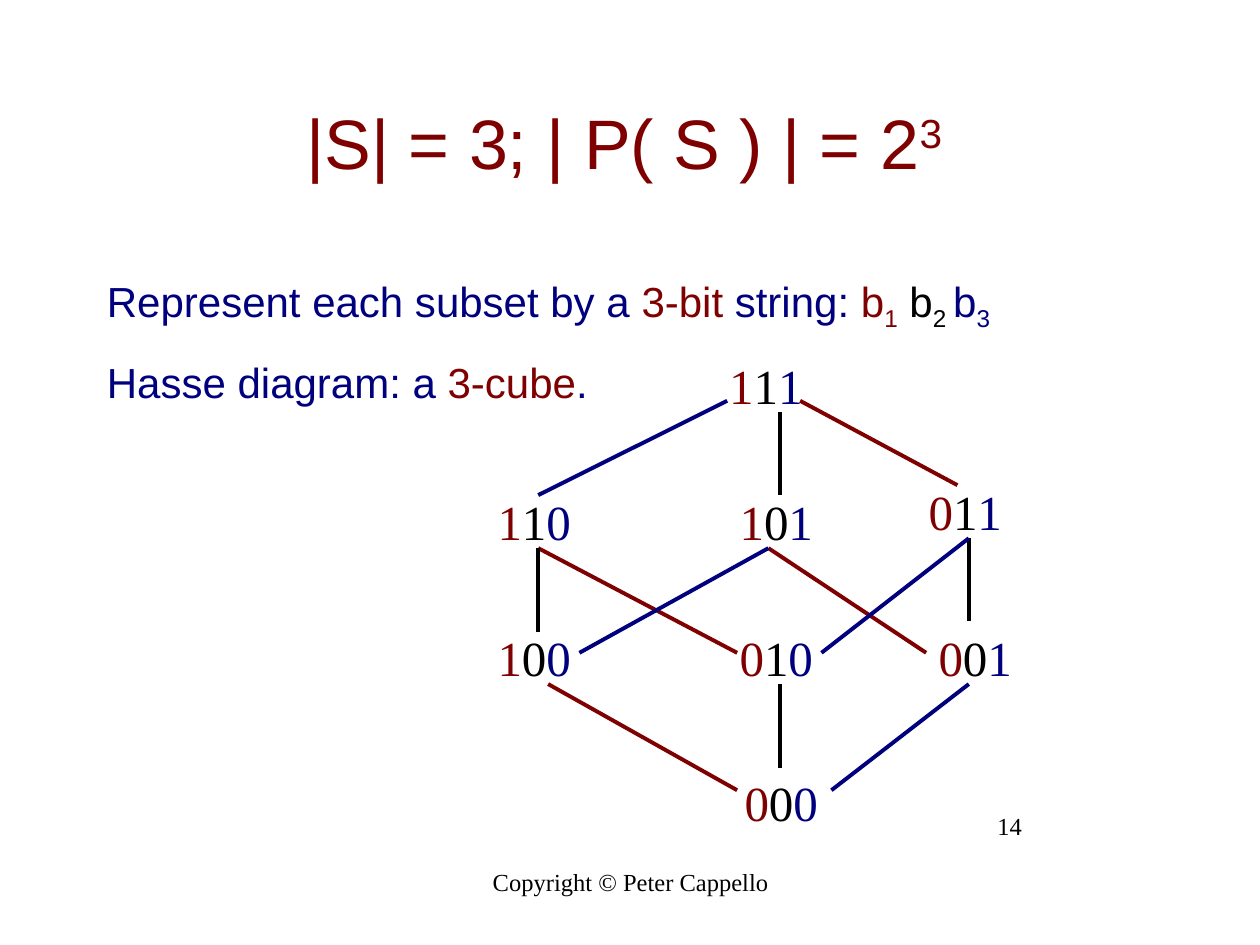
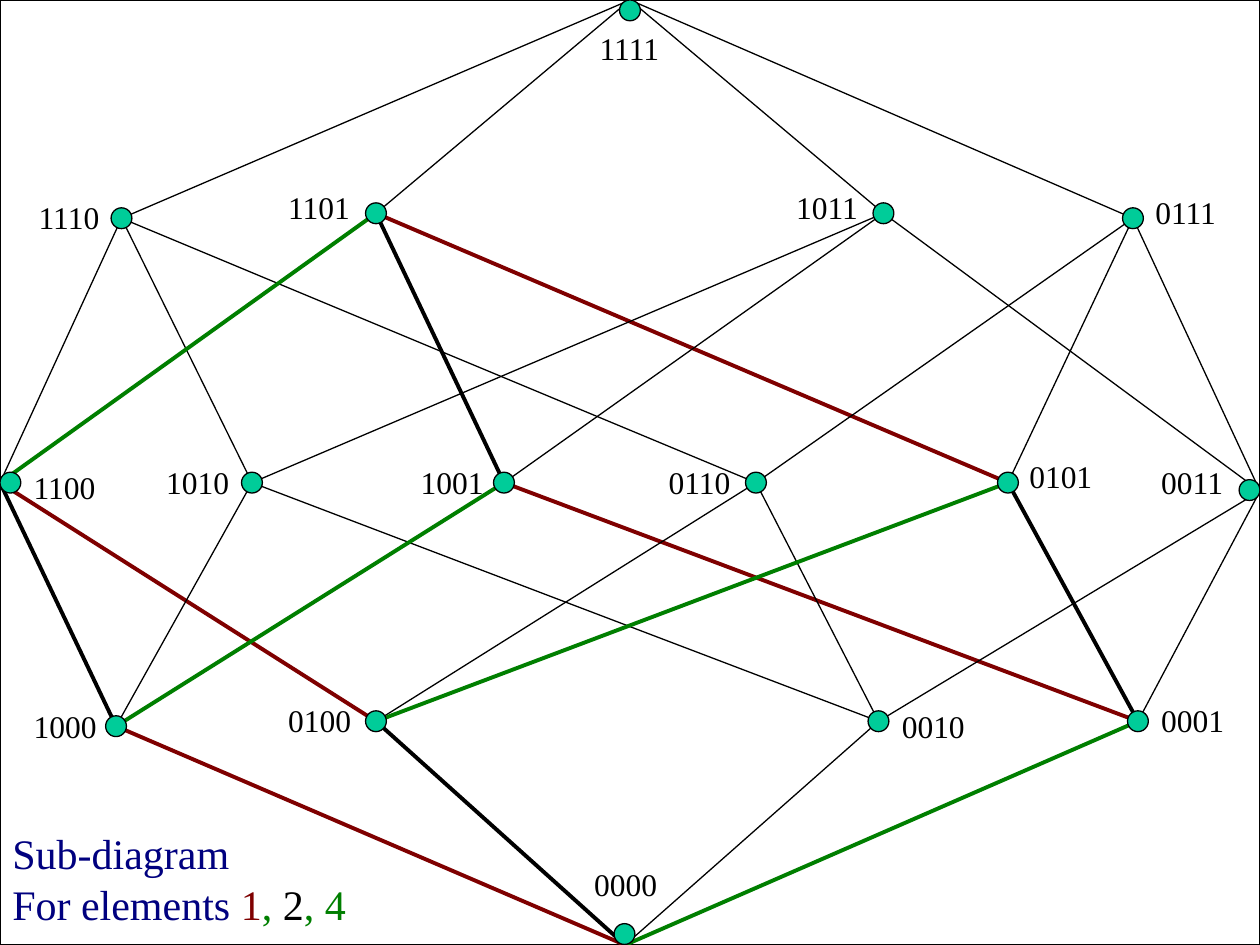
from itertools import product

from lxml.etree import SubElement
from pptx import Presentation
from pptx.dml.color import RGBColor
from pptx.enum.shapes import MSO_CONNECTOR, MSO_SHAPE
from pptx.enum.text import MSO_ANCHOR, MSO_AUTO_SIZE, PP_ALIGN
from pptx.oxml.ns import qn
from pptx.util import Cm, Pt

RED, BLACK, BLUE, GREEN = "7F0000", "000000", "00007F", "007F00"
WHITE, TEAL = "FFFFFF", "00CC99"
SANS, SERIF = "Arial", "Times New Roman"
THIN, BOLD = 0.75, 2.25

rgb = RGBColor.from_string


def write(sp, *paragraphs, size, font=SERIF, align=PP_ALIGN.LEFT, wrap=False):
    """Fill a shape; each paragraph is a list of (text, colour[, baseline %]) runs."""
    tf = sp.text_frame
    tf.word_wrap = wrap
    tf.auto_size = MSO_AUTO_SIZE.NONE if wrap else MSO_AUTO_SIZE.SHAPE_TO_FIT_TEXT
    for i, runs in enumerate(paragraphs):
        p = tf.add_paragraph() if i else tf.paragraphs[0]
        p.alignment = align
        for text, color, *baseline in runs:
            r = p.add_run()
            r.text = text
            r.font.name, r.font.size = font, Pt(size)
            r.font.color.rgb = rgb(color)
            if baseline:
                r.font._element.set("baseline", str(baseline[0] * 1000))


def add_line(s, x1, y1, x2, y2, color, width):
    line = s.shapes.add_connector(MSO_CONNECTOR.STRAIGHT, Cm(x1), Cm(y1), Cm(x2), Cm(y2))
    line.line.color.rgb = rgb(color)
    line.line.width = Pt(width)
    SubElement(line._element.spPr, qn("a:effectLst"))


prs = Presentation()
prs.slide_width, prs.slide_height = Cm(25.4), Cm(19.05)

# Slide 1: the 3-cube
s = prs.slides.add_slide(prs.slide_layouts[1])
title, body = s.placeholders
title.left, title.top, title.width, title.height = Cm(1.9), Cm(1.27), Cm(21.6), Cm(3.18)
title.text_frame.vertical_anchor = MSO_ANCHOR.MIDDLE
write(title, [("|S| = 3; | P( S ) | = 2", RED), ("3 ", RED, 30)],
      size=40, font=SANS, align=PP_ALIGN.CENTER, wrap=True)

body.left, body.top, body.width, body.height = Cm(1.9), Cm(5.08), Cm(22.66), Cm(12.27)
write(body,
      [("Represent each subset by a ", BLUE), ("3-bit", RED), (" string: ", BLUE),
       ("b", RED), ("1", RED, -25), (" b", BLACK), ("2 ", BLACK, -25),
       ("b", BLUE), ("3", BLUE, -25)],
      [("Hasse diagram: a ", BLUE), ("3-cube", RED), (".", BLUE)],
      size=24, font=SANS, wrap=True)
for p in body.text_frame.paragraphs:
    p.line_spacing = 1.3
    pPr = p._p.get_or_add_pPr()
    pPr.set("marL", str(Cm(0.95)))
    pPr.set("indent", str(-Cm(0.95)))
    SubElement(pPr, qn("a:buNone"))

footers = [
    ("Copyright © Peter Cappello", PP_ALIGN.CENTER, 8.69, 17.35, 8.05),
    ("14", PP_ALIGN.RIGHT, 15.57, 16.23, 5.28),
]
for text, align, x, y, w in footers:
    box = s.shapes.add_textbox(Cm(x), Cm(y), Cm(w), Cm(1.27))
    write(box, [(text, BLACK)], size=14, align=align, wrap=True)

cube_labels = {
    "111": (14.45, 7.04),
    "110": (9.78, 9.78), "101": (14.66, 9.78), "011": (18.47, 9.58),
    "100": (9.78, 12.52), "010": (14.66, 12.52), "001": (18.67, 12.52),
    "000": (14.76, 15.44),
}
for bits, (x, y) in cube_labels.items():
    box = s.shapes.add_textbox(Cm(x), Cm(y), Cm(1.98), Cm(1.45))
    write(box, list(zip(bits, (RED, BLACK, BLUE))), size=28)

# Each colour marks the bit that changes along the edge
cube_edges = {
    RED: [(14.86, 15.93, 11.05, 13.79), (18.67, 13.16, 15.49, 11.05),
          (14.86, 13.16, 10.85, 11.05), (19.3, 9.78, 16.13, 8.08)],
    BLACK: [(10.85, 12.75, 10.85, 11.05), (15.72, 15.49, 15.72, 13.79),
            (19.53, 12.52, 19.53, 10.85), (15.72, 9.98, 15.72, 8.31)],
    BLUE: [(16.76, 15.93, 19.53, 13.79), (11.68, 13.16, 15.49, 11.05),
           (16.56, 13.16, 19.53, 10.85), (10.85, 9.98, 14.66, 8.08)],
}
for color, edges in cube_edges.items():
    for edge in edges:
        add_line(s, *edge, color, BOLD)

# Slide 2: the 4-cube with the sub-diagram for elements 1, 2, 4
s = prs.slides.add_slide(prs.slide_layouts[6])
frame = s.shapes.add_shape(MSO_SHAPE.RECTANGLE, 0, 0, prs.slide_width, prs.slide_height)
frame.shadow.inherit = False
frame.fill.solid()
frame.fill.fore_color.rgb = rgb(WHITE)
frame.line.color.rgb = rgb(BLACK)
frame.line.width = Pt(THIN)

# bits: left and top of the dot, left and top of its label
DOT = 0.42
nodes = {
    "1111": (12.49, 0, 11.84, 0.46),
    "1110": (2.24, 4.19, 0.53, 3.86),
    "1101": (7.37, 4.09, 5.56, 3.66),
    "1011": (17.6, 4.09, 15.8, 3.66),
    "0111": (22.63, 4.19, 23.04, 3.76),
    "1100": (0, 9.52, 0.43, 9.32),
    "1010": (4.87, 9.52, 3.1, 9.2),
    "1001": (9.95, 9.52, 8.23, 9.2),
    "0110": (15.03, 9.52, 13.23, 9.2),
    "0101": (20.11, 9.52, 20.5, 9.09),
    "0011": (24.98, 9.67, 23.16, 9.2),
    "1000": (2.13, 14.43, 0.43, 14.12),
    "0100": (7.37, 14.33, 5.56, 14),
    "0010": (17.5, 14.33, 17.93, 14.12),
    "0001": (22.73, 14.33, 23.16, 14),
    "0000": (12.38, 18.62, 11.73, 17.32),
}

# Edges meet at dot centres, or at the slide border for the outermost dots
ends = {bits: (x + DOT / 2, y + DOT / 2) for bits, (x, y, *_) in nodes.items()}
ends.update({"1111": (12.7, 0), "1100": (0, 9.73),
             "0011": (25.4, 9.9), "0000": (12.6, 19.05)})

# An edge clears one bit; those without element 3 form the sub-diagram
for upper, i in product(nodes, range(4)):
    if upper[i] == "1":
        lower = upper[:i] + "0" + upper[i + 1:]
        in_sub = upper[2] == "0"
        color = (RED, BLACK, BLACK, GREEN)[i] if in_sub else BLACK
        add_line(s, *ends[upper], *ends[lower], color, BOLD if in_sub else THIN)

for bits, (x, y, label_x, label_y) in nodes.items():
    dot = s.shapes.add_shape(MSO_SHAPE.OVAL, Cm(x), Cm(y), Cm(DOT), Cm(DOT))
    dot.shadow.inherit = False
    dot.fill.solid()
    dot.fill.fore_color.rgb = rgb(TEAL)
    dot.line.color.rgb = rgb(BLACK)
    dot.line.width = Pt(THIN)
    box = s.shapes.add_textbox(Cm(label_x), Cm(label_y), Cm(1.78), Cm(1.02))
    write(box, [(bits, BLACK)], size=18)

caption = s.shapes.add_textbox(0, Cm(16.56), Cm(7.24), Cm(2.29))
write(caption,
      [("Sub-diagram", BLUE)],
      [("For elements ", BLUE), ("1", RED), (", ", GREEN), ("2", BLACK), (", 4", GREEN)],
      size=24)

prs.save("out.pptx")
